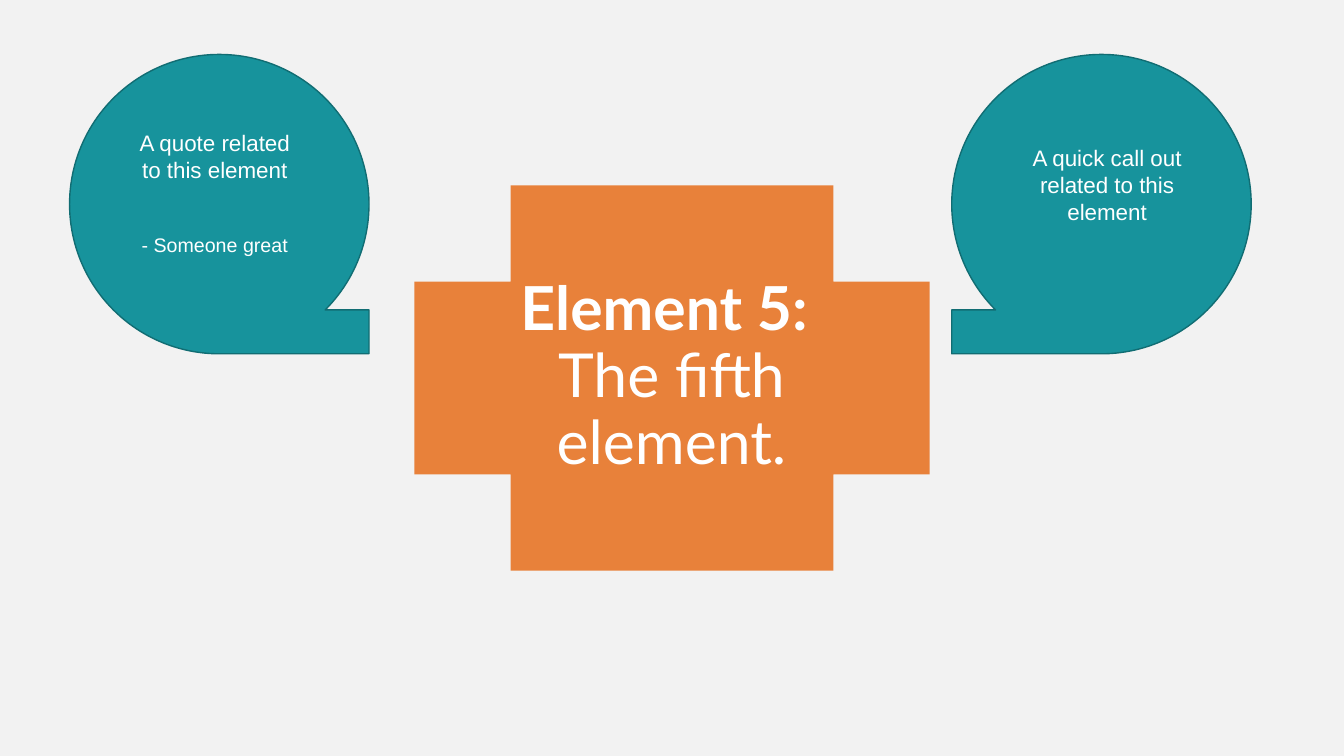
from dataclasses import dataclass

from pptx import Presentation
from pptx.dml.color import RGBColor
from pptx.enum.shapes import MSO_SHAPE as Shape
from pptx.enum.text import MSO_ANCHOR as Anchor, MSO_AUTO_SIZE as AutoSize, PP_ALIGN as Align
from pptx.util import Inches, Pt


@dataclass(frozen=True)
class Theme:
    background: str = "F2F2F2"
    cross: str = "E8813A"
    bubble: str = "17939C"
    bubble_line: str = "116D73"
    text: str = "FFFFFF"
    title_font: str = "Lato"
    body_font: str = "Arial"
    title_size: float = 43.3
    title_leading: float = 47.7
    body_size: float = 16
    credit_size: float = 14


THEME = Theme()

TITLE = [("Element 5: ", True), ("The fifth element.", False)]
TITLE_BOX = (4.45, 2.74, 4.42, 2.03)
CROSS_BOX = (4.11, 1.84, 5.11, 3.82)

BUBBLE_TOP, BUBBLE_SIZE = 0.54, 2.97
BUBBLES = [(0.69, False), (9.44, True)]

NOTE_WIDTH = 1.78
NOTES = [
    ("A quote related to this element", 1.24, 1.23, 0.91, THEME.body_size),
    ("- Someone great", 1.24, 2.26, 0.34, THEME.credit_size),
    ("A quick call out related to this element", 10.09, 1.38, 0.91, THEME.body_size),
]


def color(value):
    return RGBColor.from_string(value)


def add_shape(slide, kind, box, fill, line=None, flip=False):
    sp = slide.shapes.add_shape(kind, *map(Inches, box))
    sp.shadow.inherit = False
    sp.fill.solid()
    sp.fill.fore_color.rgb = color(fill)
    if line:
        sp.line.color.rgb = color(line)
        sp.line.width = Pt(1)
    else:
        sp.line.fill.background()
    if flip:
        sp._element.spPr.get_or_add_xfrm().set("flipH", "1")


def add_text(slide, lines, box, *, font, size, leading=None, inset=None):
    tf = slide.shapes.add_textbox(*map(Inches, box)).text_frame
    tf.word_wrap = True
    tf.auto_size = AutoSize.SHAPE_TO_FIT_TEXT
    tf.vertical_anchor = Anchor.TOP
    if inset is not None:
        tf.margin_left = tf.margin_right = tf.margin_top = tf.margin_bottom = Inches(inset)
    for i, (text, bold) in enumerate(lines):
        p = tf.add_paragraph() if i else tf.paragraphs[0]
        p.alignment = Align.CENTER
        if leading:
            p.line_spacing = Pt(leading)
        r = p.add_run()
        r.text = text
        r.font.name = font
        r.font.size = Pt(size)
        r.font.bold = bold
        r.font.color.rgb = color(THEME.text)


def main():
    prs = Presentation()
    prs.slide_width, prs.slide_height = Inches(13.33), Inches(7.5)
    s = prs.slides.add_slide(prs.slide_layouts[6])
    s.background.fill.solid()
    s.background.fill.fore_color.rgb = color(THEME.background)

    add_shape(s, Shape.CROSS, CROSS_BOX, THEME.cross, flip=True)
    add_text(s, TITLE, TITLE_BOX, font=THEME.title_font, size=THEME.title_size,
             leading=THEME.title_leading, inset=0)

    for left, flip in BUBBLES:
        add_shape(s, Shape.FLOWCHART_SEQUENTIAL_ACCESS_STORAGE,
                  (left, BUBBLE_TOP, BUBBLE_SIZE, BUBBLE_SIZE),
                  THEME.bubble, line=THEME.bubble_line, flip=flip)

    for text, left, top, height, size in NOTES:
        add_text(s, [(text, False)], (left, top, NOTE_WIDTH, height),
                 font=THEME.body_font, size=size)

    prs.save("out.pptx")


if __name__ == "__main__":
    main()
